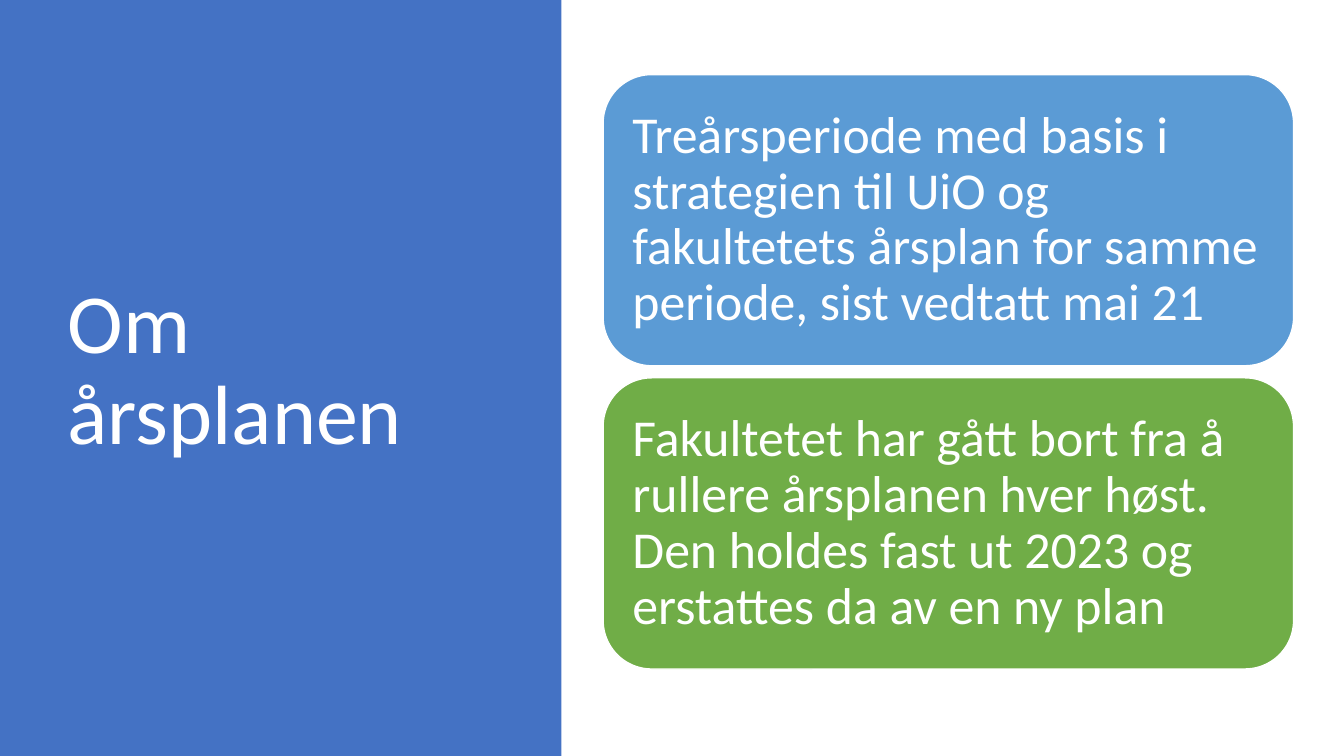
from pptx import Presentation
from pptx.dml.color import RGBColor
from pptx.enum.shapes import MSO_SHAPE
from pptx.enum.text import MSO_ANCHOR, MSO_AUTO_SIZE, PP_ALIGN
from pptx.util import Pt

COLORS = {
    "panel": "4472C4",
    "period": "5B9BD5",
    "change": "70AD47",
    "white": "FFFFFF",
}
FONT = "Calibri"
SLIDE_WIDTH, SLIDE_HEIGHT = 960, 540
PANEL_WIDTH = 401
CARD_LEFT, CARD_TOP = 430.8, 53.3
CARD_WIDTH, CARD_HEIGHT, CARD_GAP = 493.2, 208, 8.6
CARD_MARGIN = 10.8

CARDS = [
    ("period", "Treårsperiode med basis i strategien til UiO og "
               "fakultetets årsplan for samme periode, sist vedtatt mai 21"),
    ("change", "Fakultetet har gått bort fra å rullere årsplanen hver høst. "
               "Den holdes fast ut 2023 og erstattes da av en ny plan"),
]


def color(name):
    return RGBColor.from_string(COLORS[name])


def write_text(shape, text, size):
    """Fill a shape with left-aligned, vertically centred white text."""
    frame = shape.text_frame
    frame.text = text
    frame.word_wrap = True
    frame.auto_size = MSO_AUTO_SIZE.NONE
    frame.vertical_anchor = MSO_ANCHOR.MIDDLE
    paragraph = frame.paragraphs[0]
    paragraph.alignment = PP_ALIGN.LEFT
    paragraph.line_spacing = 0.9
    font = paragraph.runs[0].font
    font.name = FONT
    font.size = Pt(size)
    font.color.rgb = color("white")


def add_block(slide, preset, left, top, width, height, fill):
    shape = slide.shapes.add_shape(preset, Pt(left), Pt(top), Pt(width), Pt(height))
    shape.shadow.inherit = False
    shape.fill.solid()
    shape.fill.fore_color.rgb = color(fill)
    shape.line.fill.background()
    return shape


def add_card(slide, top, fill, text):
    card = add_block(slide, MSO_SHAPE.ROUNDED_RECTANGLE,
                     CARD_LEFT, top, CARD_WIDTH, CARD_HEIGHT, fill)
    card.line.color.rgb = color("white")
    card.line.width = Pt(1)
    frame = card.text_frame
    frame.margin_left = frame.margin_right = Pt(CARD_MARGIN)
    frame.margin_top = frame.margin_bottom = Pt(CARD_MARGIN)
    write_text(card, text, 37)


def place_title(slide, text):
    title = slide.shapes.title
    title.left, title.top, title.width, title.height = Pt(41), Pt(49), Pt(299.5), Pt(433.4)
    write_text(title, text, 60)


def main():
    presentation = Presentation()
    presentation.slide_width = Pt(SLIDE_WIDTH)
    presentation.slide_height = Pt(SLIDE_HEIGHT)
    slide = presentation.slides.add_slide(presentation.slide_layouts[5])

    panel = add_block(slide, MSO_SHAPE.RECTANGLE, 0, 0, PANEL_WIDTH, SLIDE_HEIGHT, "panel")
    slide.shapes.title.element.addprevious(panel.element)
    place_title(slide, "Om årsplanen")
    for index, (fill, text) in enumerate(CARDS):
        add_card(slide, CARD_TOP + index * (CARD_HEIGHT + CARD_GAP), fill, text)

    presentation.save("out.pptx")


if __name__ == "__main__":
    main()
